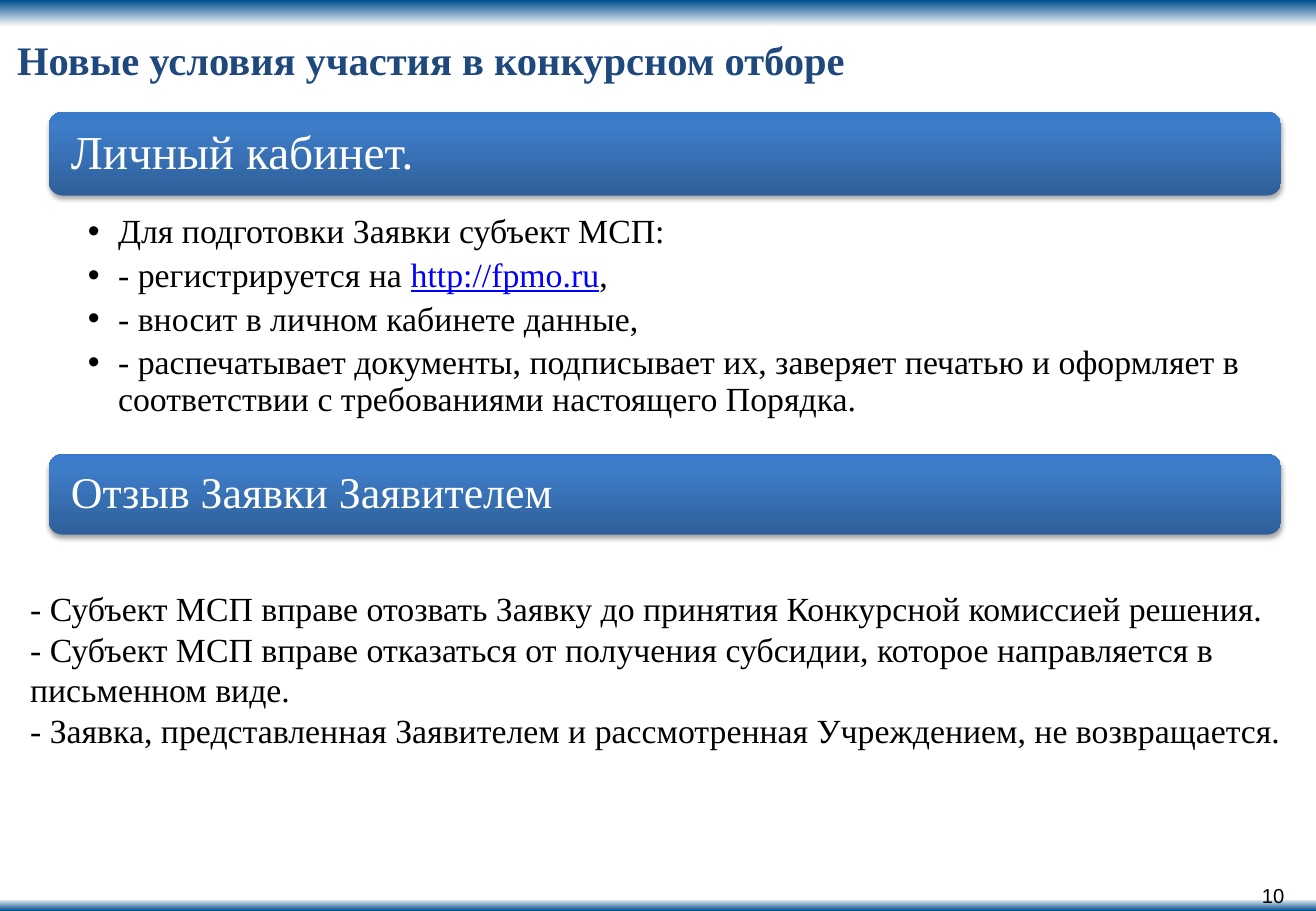
from lxml import etree
from pptx import Presentation
from pptx.dml.color import RGBColor
from pptx.enum.shapes import MSO_SHAPE
from pptx.enum.text import MSO_ANCHOR, PP_ALIGN
from pptx.oxml.ns import qn
from pptx.util import Cm, Pt

RECT, ROUND = MSO_SHAPE.RECTANGLE, MSO_SHAPE.ROUNDED_RECTANGLE
TOP, MIDDLE = MSO_ANCHOR.TOP, MSO_ANCHOR.MIDDLE
LEFT, RIGHT = PP_ALIGN.LEFT, PP_ALIGN.RIGHT

BLACK = RGBColor(0x00, 0x00, 0x00)
WHITE = RGBColor(0xFF, 0xFF, 0xFF)
NAVY = RGBColor(0x1F, 0x49, 0x7D)
LINK = RGBColor(0x00, 0x00, 0xFF)
DEEP = RGBColor(0x00, 0x4E, 0x8E)
EDGE = [(0, DEEP), (100, WHITE)]
BLUES = [(0, RGBColor(0x2F, 0x5F, 0x99)), (80, RGBColor(0x3D, 0x7C, 0xC7)),
         (100, RGBColor(0x3A, 0x7C, 0xCB))]
UP, DOWN = 90, 270
WIDE, HIGH = 27.51, 19.05


def add(parent, tag, **attrs):
    node = etree.SubElement(parent, qn(tag))
    for key, value in attrs.items():
        node.set(key, str(value))
    return node


class Page:
    serif, sans = "Times New Roman", "Arial"

    def __init__(self, slide):
        self.slide = slide

    def block(self, kind, box, stops, angle):
        """Shape with a gradient fill and no outline."""
        shape = self.slide.shapes.add_shape(kind, *map(Cm, box))
        shape.shadow.inherit = False
        shape.line.fill.background()
        shape.fill.gradient()
        shape.fill.gradient_angle = angle
        ramp = shape._element.spPr.find(".//" + qn("a:gsLst"))
        for old in list(ramp):
            ramp.remove(old)
        for pos, color in stops:
            add(add(ramp, "a:gs", pos=pos * 1000), "a:srgbClr", val=color)
        return shape

    def header(self, box, words, size):
        """Rounded section bar with a soft shadow."""
        bar = self.block(ROUND, box, BLUES, UP)
        glow = bar._element.spPr.find(qn("a:effectLst"))
        shade = add(glow, "a:outerShdw", blurRad=Pt(3.1), dist=Pt(1.8),
                    dir=5400000, algn="ctr", rotWithShape=0)
        add(add(shade, "a:srgbClr", val=BLACK), "a:alpha", val=35000)
        frame = self.frame(bar, (0.38, 0, 0.38, 0), MIDDLE)
        self.put(frame, [[(words, {})]], size, WHITE, spacing=0.9)

    def text(self, box, pad, lines, size, **style):
        shape = self.slide.shapes.add_textbox(*map(Cm, box))
        self.put(self.frame(shape, pad), lines, size, **style)

    def frame(self, shape, pad, anchor=TOP):
        frame = shape.text_frame
        frame.word_wrap = True
        frame.vertical_anchor = anchor
        (frame.margin_left, frame.margin_top,
         frame.margin_right, frame.margin_bottom) = map(Cm, pad)
        return frame

    def put(self, frame, lines, size, color=BLACK, font=serif, bold=False,
            align=LEFT, spacing=None, after=0, bullet=False):
        for i, line in enumerate(lines):
            par = frame.paragraphs[0] if i == 0 else frame.add_paragraph()
            par.alignment = align
            par.line_spacing = spacing
            par.space_after = Pt(after)
            if bullet:
                props = par._p.get_or_add_pPr()
                props.set("marL", str(Cm(0.63)))
                props.set("indent", str(-Cm(0.63)))
                add(props, "a:buFont", typeface=self.sans)
                add(props, "a:buChar", char="•")
            for words, extra in line:
                run = par.add_run()
                run.text = words
                run.font.name = font
                run.font.size = Pt(size)
                run.font.bold = bold
                run.font.color.rgb = extra.get("color", color)
                run.font.underline = extra.get("under", False)


def main():
    deck = Presentation()
    deck.slide_width, deck.slide_height = Cm(WIDE), Cm(HIGH)
    page = Page(deck.slides.add_slide(deck.slide_layouts[6]))

    # Edge bands
    page.block(RECT, (0, HIGH - 0.26, WIDE, 0.26), EDGE, UP)
    page.block(RECT, (0, 0, WIDE, 0.56), EDGE, DOWN)

    # Account section
    page.header((1.02, 2.34, 25.76, 1.75), "Личный кабинет.", 28)
    steps = [
        [("Для подготовки Заявки субъект МСП:", {})],
        [("- регистрируется на ", {}),
         ("http://fpmo.ru", {"color": LINK, "under": True}), (",", {})],
        [("- вносит в личном кабинете данные,", {})],
        [("- распечатывает документы, подписывает их, заверяет печатью и "
          "оформляет в соответствии с требованиями настоящего Порядка.", {})],
    ]
    page.text((1.02, 4.39, 25.76, 9.02), (0.82, 0.1, 0.5, 0.1), steps, 20,
              spacing=0.9, after=4.3, bullet=True)

    # Withdrawal section
    page.header((1.02, 9.5, 25.76, 1.68), "Отзыв Заявки Заявителем", 26)
    rules = [
        "- Субъект МСП вправе отозвать Заявку до принятия Конкурсной "
        "комиссией решения.",
        "- Субъект МСП вправе отказаться от получения субсидии, которое "
        "направляется в письменном виде.",
        "- Заявка, представленная Заявителем и рассмотренная Учреждением, "
        "не возвращается.",
    ]
    page.text((0.38, 12.17, 27.1, 4.52), (0.25, 0.13, 0.25, 0.13),
              [[(rule, {})] for rule in rules], 20)

    # Title and page number
    flush = (0, 0, 0, 0)
    page.text((0.36, 0.74, 25.68, 1.02), flush,
              [[("Новые условия участия в конкурсном отборе", {})]], 24,
              color=NAVY, bold=True)
    page.text((21.11, 18.47, 5.74, 0.51), flush, [[("10", {})]], 12,
              font=page.sans, align=RIGHT)

    deck.save("out.pptx")


if __name__ == "__main__":
    main()
